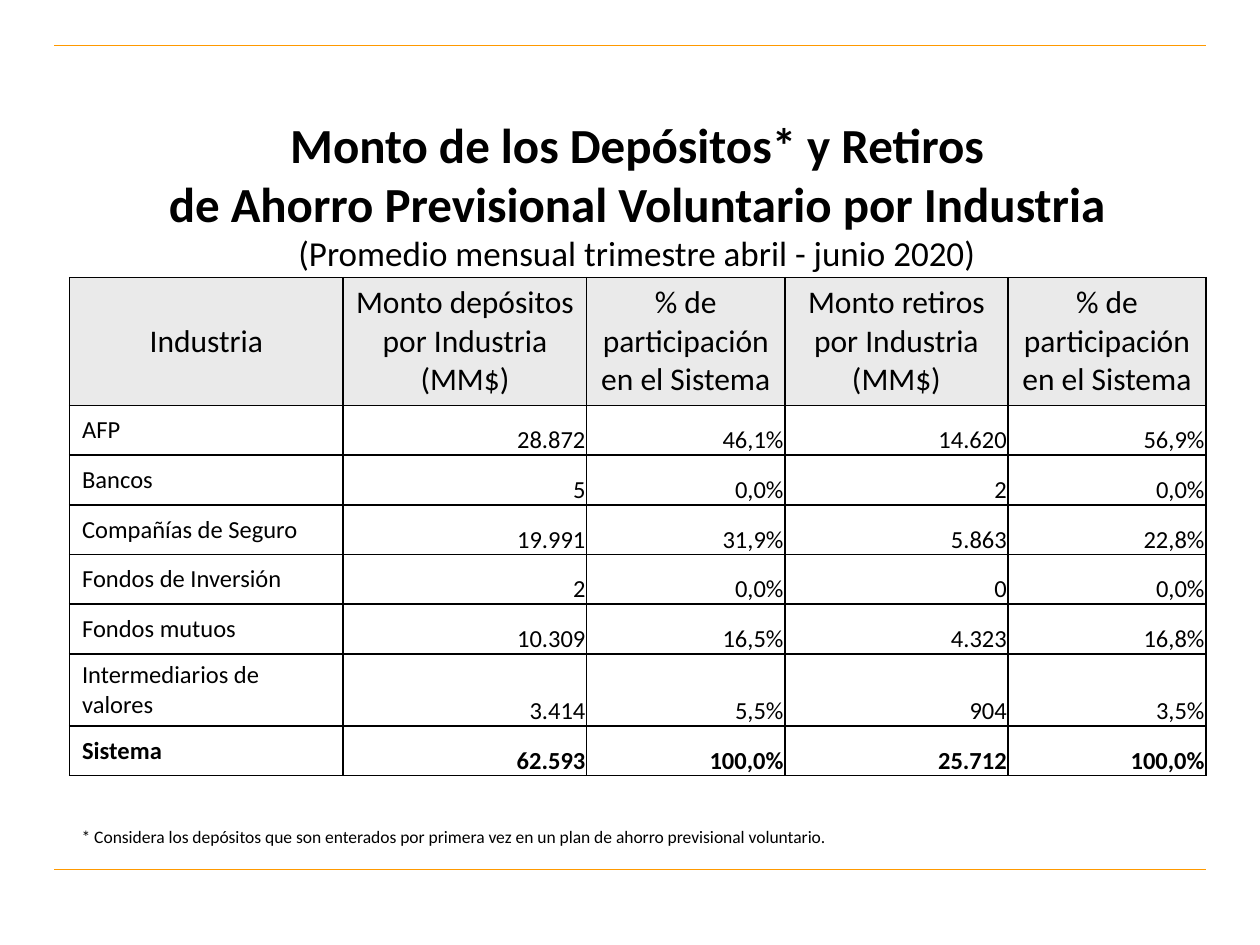
from lxml import etree
from pptx import Presentation
from pptx.dml.color import RGBColor
from pptx.enum.shapes import MSO_CONNECTOR
from pptx.enum.text import MSO_ANCHOR, MSO_AUTO_SIZE, PP_ALIGN
from pptx.oxml.ns import qn
from pptx.util import Pt

STRAIGHT = MSO_CONNECTOR.STRAIGHT
MIDDLE, BOTTOM = MSO_ANCHOR.MIDDLE, MSO_ANCHOR.BOTTOM
LEFT, CENTER, RIGHT = PP_ALIGN.LEFT, PP_ALIGN.CENTER, PP_ALIGN.RIGHT
NO_FIT, GROW = MSO_AUTO_SIZE.NONE, MSO_AUTO_SIZE.SHAPE_TO_FIT_TEXT

FONT = "Calibri"
BLACK, WHITE, HEADER_GREY, ORANGE = "000000", "FFFFFF", "EAEAEA", "FF9900"

COLUMN_WIDTHS = [156.4, 139.2, 113.2, 127.6, 113]
HEADER_HEIGHT, ROW_HEIGHT = 66, 28.4
TEXT_MARGINS = (7.2, 3.6, 7.2, 3.6)
FIGURE_MARGINS = (0.72, 0.72, 0.72, 0)

TITLE_LINES = [
    ("Monto de los Depósitos* y Retiros", 28, True),
    ("de Ahorro Previsional Voluntario por Industria", 28, True),
    ("(Promedio mensual trimestre abril - junio 2020)", 20, False),
]
SHARE_HEADER = ["% de", "participación en el Sistema"]
HEADERS = [
    ["Industria"],
    ["Monto depósitos por Industria (MM$)"],
    SHARE_HEADER,
    ["Monto retiros", "por Industria (MM$)"],
    SHARE_HEADER,
]
INDUSTRIES = [
    ("AFP", "28.872", "46,1%", "14.620", "56,9%"),
    ("Bancos", "5", "0,0%", "2", "0,0%"),
    ("Compañías de Seguro", "19.991", "31,9%", "5.863", "22,8%"),
    ("Fondos de Inversión", "2", "0,0%", "0", "0,0%"),
    ("Fondos mutuos", "10.309", "16,5%", "4.323", "16,8%"),
    ("Intermediarios de valores", "3.414", "5,5%", "904", "3,5%"),
    ("Sistema", "62.593", "100,0%", "25.712", "100,0%"),
]
FOOTNOTE = ("* Considera los depósitos que son enterados por primera vez "
            "en un plan de ahorro previsional voluntario.")


def color(hex_value):
    return RGBColor.from_string(hex_value)


def add_run(paragraph, text, size, bold=False):
    run = paragraph.add_run()
    run.text = text
    run.font.name = FONT
    run.font.size = Pt(size)
    run.font.bold = bold
    run.font.color.rgb = color(BLACK)


def add_rule(slide, y):
    rule = slide.shapes.add_connector(STRAIGHT, Pt(31), Pt(y), Pt(689), Pt(y))
    rule.line.color.rgb = color(ORANGE)
    rule.line.width = Pt(0.75)
    etree.SubElement(rule._element.spPr, qn("a:effectLst"))


def fill_title(slide):
    title = slide.shapes.title
    title.left, title.top, title.width, title.height = Pt(29.5), Pt(71.3), Pt(669), Pt(79.2)
    frame = title.text_frame
    frame.auto_size = NO_FIT
    frame.word_wrap = True
    frame.vertical_anchor = MIDDLE
    paragraph = frame.paragraphs[0]
    paragraph.alignment = CENTER
    for index, (text, size, bold) in enumerate(TITLE_LINES):
        if index:
            paragraph.add_line_break()
        add_run(paragraph, text, size, bold)


def set_borders(cell):
    """Draw a 1 pt black line on all four sides of the cell."""
    properties = cell._tc.get_or_add_tcPr()
    for index, side in enumerate(("a:lnL", "a:lnR", "a:lnT", "a:lnB")):
        border = etree.Element(qn(side), w=str(Pt(1)))
        fill = etree.SubElement(border, qn("a:solidFill"))
        etree.SubElement(fill, qn("a:srgbClr"), val=BLACK)
        properties.insert(index, border)


def fill_cell(cell, lines, size, alignment, anchor, margins, fill=None, bold=False):
    if fill:
        cell.fill.solid()
        cell.fill.fore_color.rgb = color(fill)
    else:
        cell.fill.background()
    set_borders(cell)
    cell.vertical_anchor = anchor
    cell.margin_left, cell.margin_top, cell.margin_right, cell.margin_bottom = map(Pt, margins)
    frame = cell.text_frame
    for index, line in enumerate(lines):
        paragraph = frame.add_paragraph() if index else frame.paragraphs[0]
        paragraph.alignment = alignment
        add_run(paragraph, line, size, bold)


def add_industry_table(slide):
    row_count = len(INDUSTRIES) + 1
    height = HEADER_HEIGHT + ROW_HEIGHT * len(INDUSTRIES)
    table = slide.shapes.add_table(row_count, len(HEADERS), Pt(39.7), Pt(158.6),
                                   Pt(sum(COLUMN_WIDTHS)), Pt(height)).table
    table.first_row = table.horz_banding = False
    for column, width in zip(table.columns, COLUMN_WIDTHS):
        column.width = Pt(width)
    for index, row in enumerate(table.rows):
        row.height = Pt(ROW_HEIGHT if index else HEADER_HEIGHT)

    for column, lines in enumerate(HEADERS):
        fill_cell(table.cell(0, column), lines, 18, CENTER, MIDDLE, TEXT_MARGINS, HEADER_GREY)
    for row, (industry, *figures) in enumerate(INDUSTRIES, start=1):
        is_total = row == len(INDUSTRIES)
        fill_cell(table.cell(row, 0), [industry], 14, LEFT, MIDDLE, TEXT_MARGINS,
                  WHITE, is_total)
        for column, figure in enumerate(figures, start=1):
            fill = None if HEADERS[column] is SHARE_HEADER else WHITE
            fill_cell(table.cell(row, column), [figure], 14, RIGHT, BOTTOM,
                      FIGURE_MARGINS, fill, is_total)


def add_footnote(slide):
    footnote = slide.shapes.add_textbox(Pt(39.6), Pt(468.7), Pt(446.4), Pt(31.7))
    frame = footnote.text_frame
    frame.word_wrap = False
    frame.auto_size = GROW
    add_run(frame.paragraphs[0], FOOTNOTE, 10)


def main():
    presentation = Presentation()
    presentation.slide_width, presentation.slide_height = Pt(720), Pt(540)
    title_only = presentation.slide_layouts[5]
    slide = presentation.slides.add_slide(title_only)
    for y in (26, 496.8):
        add_rule(slide, y)
    fill_title(slide)
    add_industry_table(slide)
    add_footnote(slide)
    presentation.save("out.pptx")


if __name__ == "__main__":
    main()
